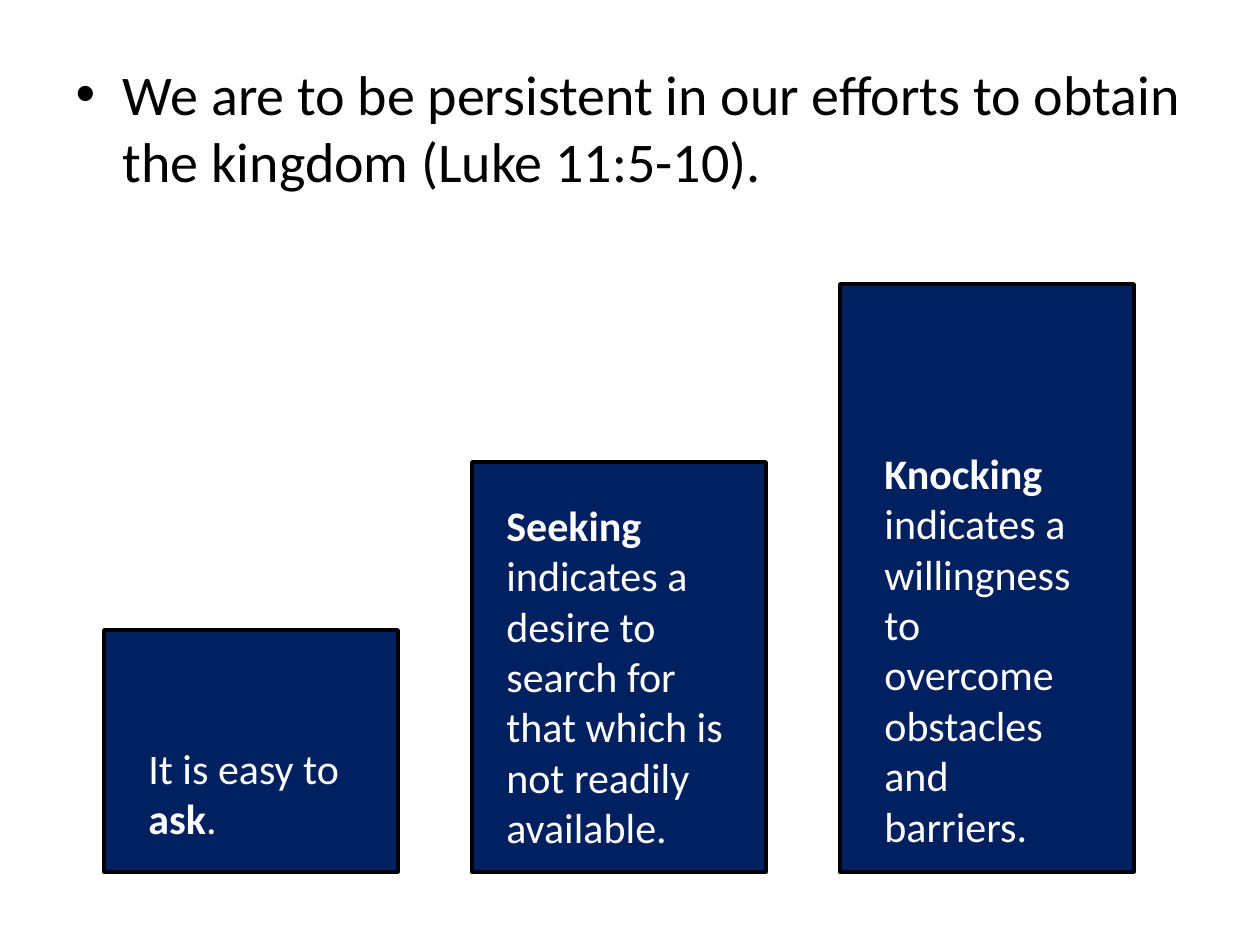
"""Build a slide with three rising steps: ask, seek and knock."""
from pptx import Presentation
from pptx.dml.color import RGBColor
from pptx.enum.shapes import MSO_SHAPE
from pptx.enum.text import MSO_AUTO_SIZE
from pptx.util import Emu, Pt

EMU_PER_PX = 914400 / 126
FONT = "Calibri"
NAVY = RGBColor(0x00, 0x20, 0x60)
BLACK = RGBColor(0x00, 0x00, 0x00)
WHITE = RGBColor(0xFF, 0xFF, 0xFF)

STEP_LEFT, STEP_PITCH, STEP_WIDTH, STEP_BOTTOM = 104, 368, 294, 872
STEP_HEIGHTS = (242, 410, 588)
STEP_TEXTS = (
    ((136, 736, 231, 115), (("It is easy to ", False), ("ask", True), (".", False))),
    ((494, 493, 252, 369), (
        ("Seeking", True),
        (" indicates a desire to search for that which is not readily available.", False),
    )),
    ((872, 441, 231, 420), (
        ("Knocking", True),
        (" indicates a willingness to overcome obstacles and barriers.", False),
    )),
)


def px(*lengths):
    """Turn pixel lengths into a list of EMU lengths."""
    return [Emu(round(length * EMU_PER_PX)) for length in lengths]


def add_text(paragraph, text, *, size, color, bold=None):
    """Append one formatted run to a paragraph."""
    run = paragraph.add_run()
    run.text = text
    run.font.name = FONT
    run.font.size = Pt(size)
    run.font.bold = bold
    run.font.color.rgb = color


def fill_body(slide):
    """Place the body placeholder and write its bullet."""
    body = slide.placeholders[1]
    body.left, body.top, body.width, body.height = px(63, 53, 1134, 189)
    add_text(
        body.text_frame.paragraphs[0],
        "We are to be persistent in our efforts to obtain the kingdom (Luke 11:5-10).",
        size=32,
        color=BLACK,
    )


def add_step(slide, index, height):
    """Draw one step standing on the common baseline."""
    left = STEP_LEFT + index * STEP_PITCH
    step = slide.shapes.add_shape(
        MSO_SHAPE.RECTANGLE, *px(left, STEP_BOTTOM - height, STEP_WIDTH, height)
    )
    step.shadow.inherit = False
    step.fill.solid()
    step.fill.fore_color.rgb = NAVY
    step.line.color.rgb = BLACK
    step.line.width = Pt(2)


def add_step_text(slide, box, runs):
    """Write the wording of one step in a wrapping text box."""
    text_frame = slide.shapes.add_textbox(*px(*box)).text_frame
    text_frame.word_wrap = True
    text_frame.auto_size = MSO_AUTO_SIZE.SHAPE_TO_FIT_TEXT
    for text, bold in runs:
        add_text(text_frame.paragraphs[0], text, size=24, color=WHITE, bold=bold)


def main():
    """Build and save the presentation."""
    presentation = Presentation()
    presentation.slide_width, presentation.slide_height = px(1260, 945)
    slide = presentation.slides.add_slide(presentation.slide_layouts[1])
    title = slide.shapes.title.element
    title.getparent().remove(title)
    fill_body(slide)
    for index, height in enumerate(STEP_HEIGHTS):
        add_step(slide, index, height)
    for box, runs in STEP_TEXTS:
        add_step_text(slide, box, runs)
    presentation.save("out.pptx")


if __name__ == "__main__":
    main()
